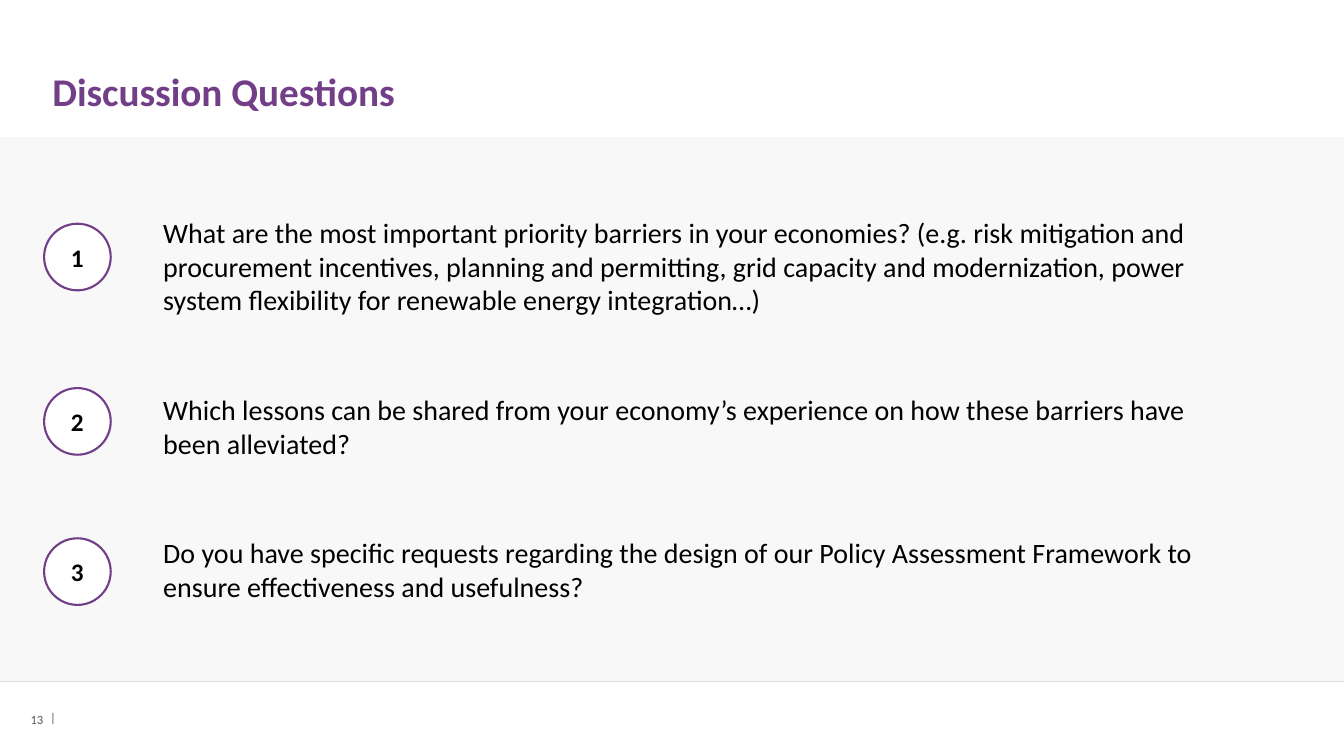
from pptx import Presentation
from pptx.dml.color import RGBColor
from pptx.enum.shapes import MSO_CONNECTOR, MSO_SHAPE
from pptx.enum.text import MSO_ANCHOR, MSO_AUTO_SIZE, PP_ALIGN
from pptx.oxml.ns import qn
from pptx.util import Pt
from lxml.etree import SubElement

TITLE = "Discussion Questions"
QUESTIONS = [
    (159.8, "What are the most important priority barriers in your economies? (e.g. risk mitigation and "
            "procurement incentives, planning and permitting, grid capacity and modernization, power "
            "system flexibility for renewable energy integration…)"),
    (277.2, "Which lessons can be shared from your economy’s experience on how these barriers have "
            "been alleviated?"),
    (384.5, "Do you have specific requests regarding the design of our Policy Assessment Framework to "
            "ensure effectiveness and usefulness?"),
]
FOOTER = [("13", 12.24, 508.3, 18.72, PP_ALIGN.RIGHT), ("|", 36, 506.9, 3.6, PP_ALIGN.CENTER)]

PURPLE = RGBColor(0x73, 0x3E, 0x88)
BLACK = RGBColor(0, 0, 0)
WHITE = RGBColor(0xFF, 0xFF, 0xFF)
BAND_GREY = RGBColor(0xF8, 0xF8, 0xF8)
RULE_GREY = RGBColor(0xD9, 0xD9, 0xD9)
FOOTER_GREY = RGBColor(0x59, 0x59, 0x59)

WIDTH, HEIGHT = 960, 540
BAND_TOP, RULE_TOP = 97.9, 486.9
CIRCLE_LEFT, CIRCLE_SIZE = 31.5, 47.6
QUESTION_GAP = 54.4


def set_font(paragraph, size, color, bold=False):
    font = paragraph.font
    font.name, font.size, font.bold = "Calibri", Pt(size), bold
    font.color.rgb = color


def set_frame(frame, anchor, margin=0):
    frame.auto_size = MSO_AUTO_SIZE.NONE
    frame.word_wrap = True
    frame.vertical_anchor = anchor
    frame.margin_left = frame.margin_right = Pt(margin)
    frame.margin_top = frame.margin_bottom = Pt(margin)


def add_shape(slide, kind, left, top, width, height, fill):
    shape = slide.shapes.add_shape(kind, Pt(left), Pt(top), Pt(width), Pt(height))
    shape.shadow.inherit = False
    shape.fill.solid()
    shape.fill.fore_color.rgb = fill
    return shape


def add_text_box(slide, left, top, width, height, anchor):
    frame = slide.shapes.add_textbox(Pt(left), Pt(top), Pt(width), Pt(height)).text_frame
    set_frame(frame, anchor)
    return frame


def add_title(slide):
    title = slide.shapes.title
    title.left, title.top, title.width, title.height = Pt(37.4), Pt(20.9), Pt(884.2), Pt(61.2)
    set_frame(title.text_frame, MSO_ANCHOR.BOTTOM)
    paragraph = title.text_frame.paragraphs[0]
    paragraph.text = TITLE
    paragraph.alignment = PP_ALIGN.LEFT
    paragraph.line_spacing = 0.9
    set_font(paragraph, 28, PURPLE, True)


def add_background(slide):
    band = add_shape(slide, MSO_SHAPE.RECTANGLE, 0, BAND_TOP, WIDTH, RULE_TOP - BAND_TOP, BAND_GREY)
    band.line.fill.background()
    rule = slide.shapes.add_connector(MSO_CONNECTOR.STRAIGHT, 0, Pt(RULE_TOP), Pt(WIDTH), Pt(RULE_TOP))
    rule.line.color.rgb = RULE_GREY
    rule.line.width = Pt(0.4)
    SubElement(rule._element.spPr, qn("a:effectLst"))


def add_questions(slide):
    frame = add_text_box(slide, 116.6, 153.9, 763.9, 317.7, MSO_ANCHOR.TOP)
    for number, (circle_top, question) in enumerate(QUESTIONS, 1):
        paragraph = frame.paragraphs[0] if number == 1 else frame.add_paragraph()
        paragraph.text = question
        paragraph.space_after = Pt(QUESTION_GAP)
        set_font(paragraph, 20, BLACK)

        circle = add_shape(slide, MSO_SHAPE.OVAL, CIRCLE_LEFT, circle_top, CIRCLE_SIZE, CIRCLE_SIZE, WHITE)
        circle.line.color.rgb = PURPLE
        circle.line.width = Pt(1.5)
        set_frame(circle.text_frame, MSO_ANCHOR.MIDDLE, 5.8)
        label = circle.text_frame.paragraphs[0]
        label.text = str(number)
        label.alignment = PP_ALIGN.CENTER
        set_font(label, 18, BLACK, True)


def add_footer(slide):
    for text, left, top, width, alignment in FOOTER:
        frame = add_text_box(slide, left, top, width, 10.8, MSO_ANCHOR.MIDDLE)
        frame.word_wrap = False
        paragraph = frame.paragraphs[0]
        paragraph.text = text
        paragraph.alignment = alignment
        set_font(paragraph, 9, FOOTER_GREY)


def main():
    presentation = Presentation()
    presentation.slide_width, presentation.slide_height = Pt(WIDTH), Pt(HEIGHT)
    slide = presentation.slides.add_slide(presentation.slide_layouts[5])
    add_background(slide)
    add_title(slide)
    add_questions(slide)
    add_footer(slide)
    presentation.save("out.pptx")


if __name__ == "__main__":
    main()
